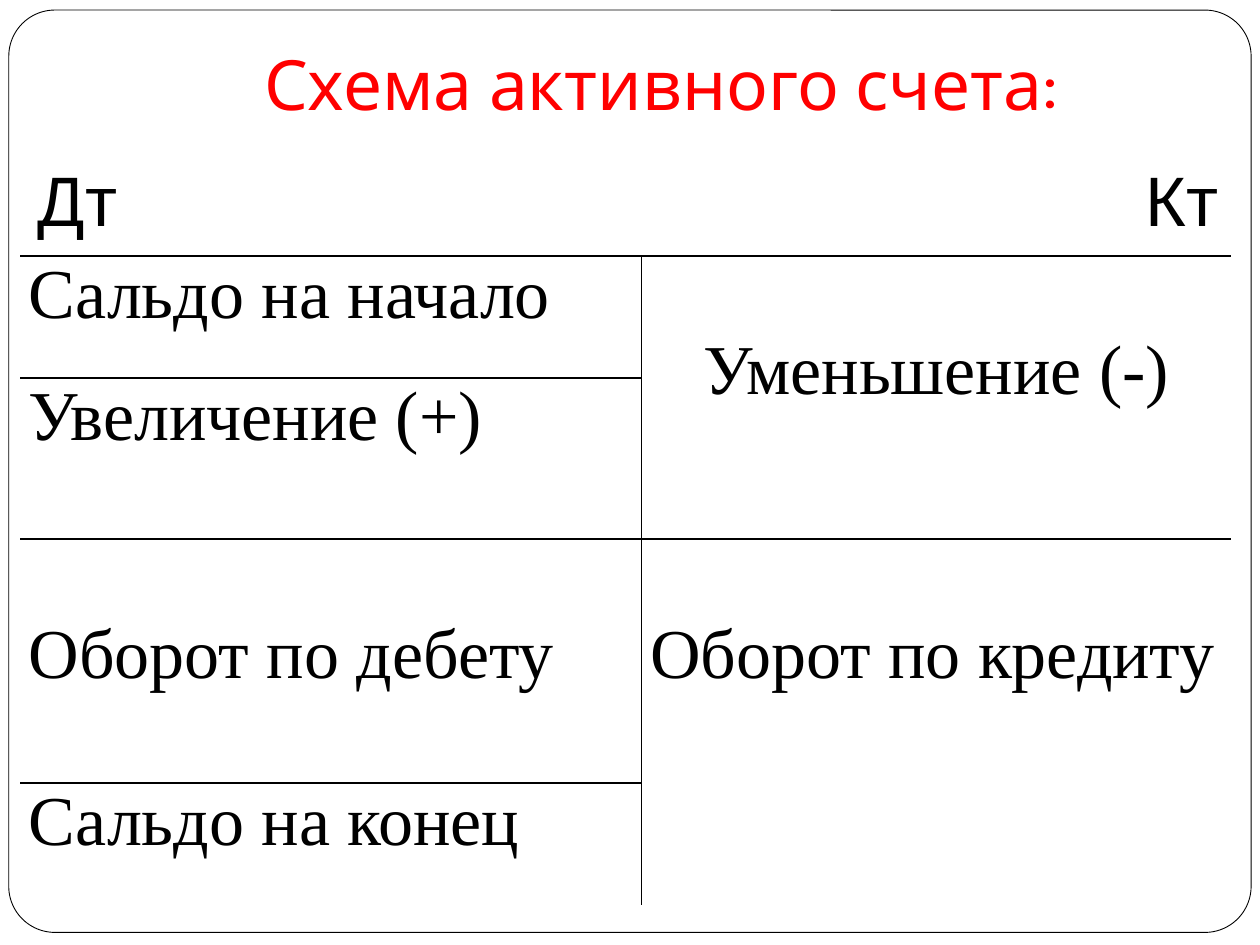
from lxml import etree
from pptx import Presentation
from pptx.dml.color import RGBColor
from pptx.enum.shapes import MSO_SHAPE
from pptx.enum.text import MSO_ANCHOR, PP_ALIGN
from pptx.oxml.ns import qn
from pptx.util import Inches, Pt

ROUNDED = MSO_SHAPE.ROUNDED_RECTANGLE
CENTER, LEFT, JUSTIFY = PP_ALIGN.CENTER, PP_ALIGN.LEFT, PP_ALIGN.JUSTIFY
BOTTOM, MIDDLE = MSO_ANCHOR.BOTTOM, MSO_ANCHOR.MIDDLE
COLORS = {"paper": "FFFFFF", "ink": "000000", "title": "FF0000"}


def write_text(frame, text, font="Times New Roman", size=40, color="ink", align=JUSTIFY, tab=None):
    para = frame.paragraphs[0]
    para.alignment = align
    if tab:
        tabs = etree.SubElement(para._p.get_or_add_pPr(), qn("a:tabLst"))
        etree.SubElement(tabs, qn("a:tab"), pos=str(Inches(tab)), algn="r")
    span = para.add_run()
    span.text = text
    span.font.name = font
    span.font.size = Pt(size)
    span.font.color.rgb = RGBColor.from_string(COLORS[color])


def set_borders(cell, visible):
    properties = cell._tc.get_or_add_tcPr()
    for side in "LRTB":
        line = etree.SubElement(properties, qn(f"a:ln{side}"), w=str(Pt(1)))
        if side in visible:
            fill = etree.SubElement(line, qn("a:solidFill"))
            etree.SubElement(fill, qn("a:srgbClr"), val=COLORS["ink"])
        else:
            etree.SubElement(line, qn("a:noFill"))


deck = Presentation()
deck.slide_width, deck.slide_height = Inches(10), Inches(7.5)
page = deck.slides.add_slide(deck.slide_layouts[6])

frame = page.shapes.add_shape(ROUNDED, Inches(0.07), Inches(0.08), Inches(9.86), Inches(7.32))
frame.adjustments[0] = 0.05
frame.shadow.inherit = False
frame.fill.solid()
frame.fill.fore_color.rgb = RGBColor.from_string(COLORS["paper"])
frame.line.color.rgb = RGBColor.from_string(COLORS["ink"])
frame.line.width = Pt(0.5)

title = page.shapes.add_textbox(Inches(1), Inches(0.3), Inches(8.5), Inches(0.79)).text_frame
title.word_wrap = True
title.vertical_anchor = BOTTOM
title.margin_bottom = Inches(0.1)
write_text(title, "Схема активного счета:", font="Karla", size=39.6, color="title", align=CENTER)

sides = page.shapes.add_textbox(Inches(0), Inches(1.19), Inches(10), Inches(0.77)).text_frame
sides.word_wrap = True
sides.vertical_anchor = MIDDLE
sides.margin_left = Inches(0.3)
write_text(sides, "Дт\tКт", font="Arial", align=LEFT, tab=9.37)

column_widths = [4.93, 4.68]
row_heights = [0.97, 1.23, 1.94, 0.97]
account = page.shapes.add_table(
    4, 2, Inches(0.16), Inches(2.03), Inches(sum(column_widths)), Inches(sum(row_heights))
).table
account.first_row = account.horz_banding = False
for column, width in zip(account.columns, column_widths):
    column.width = Inches(width)
for row, height in zip(account.rows, row_heights):
    row.height = Inches(height)

borders = [("TRB", "LT"), ("TRB", "LB"), ("TRB", "LT"), ("TR", "L")]
for row, pair in enumerate(borders):
    for column, visible in enumerate(pair):
        cell = account.cell(row, column)
        set_borders(cell, visible)
        cell.fill.background()
        cell.margin_left = cell.margin_right = Inches(0.07)
        cell.margin_top = cell.margin_bottom = Inches(0)
for row in (0, 2):
    account.cell(row, 1).merge(account.cell(row + 1, 1))

entries = [
    (0, 0, "Сальдо на начало", 0.07, 0),
    (0, 1, "Уменьшение (-)", 0.49, 0.61),
    (1, 0, "Увеличение (+)", 0.07, 0),
    (2, 0, "Оборот по дебету", 0.07, 0.61),
    (2, 1, "Оборот по кредиту", 0.07, 0.61),
    (3, 0, "Сальдо на конец", 0.07, 0),
]
for row, column, text, left, top in entries:
    cell = account.cell(row, column)
    cell.margin_left, cell.margin_top = Inches(left), Inches(top)
    write_text(cell.text_frame, text)

deck.save("out.pptx")
